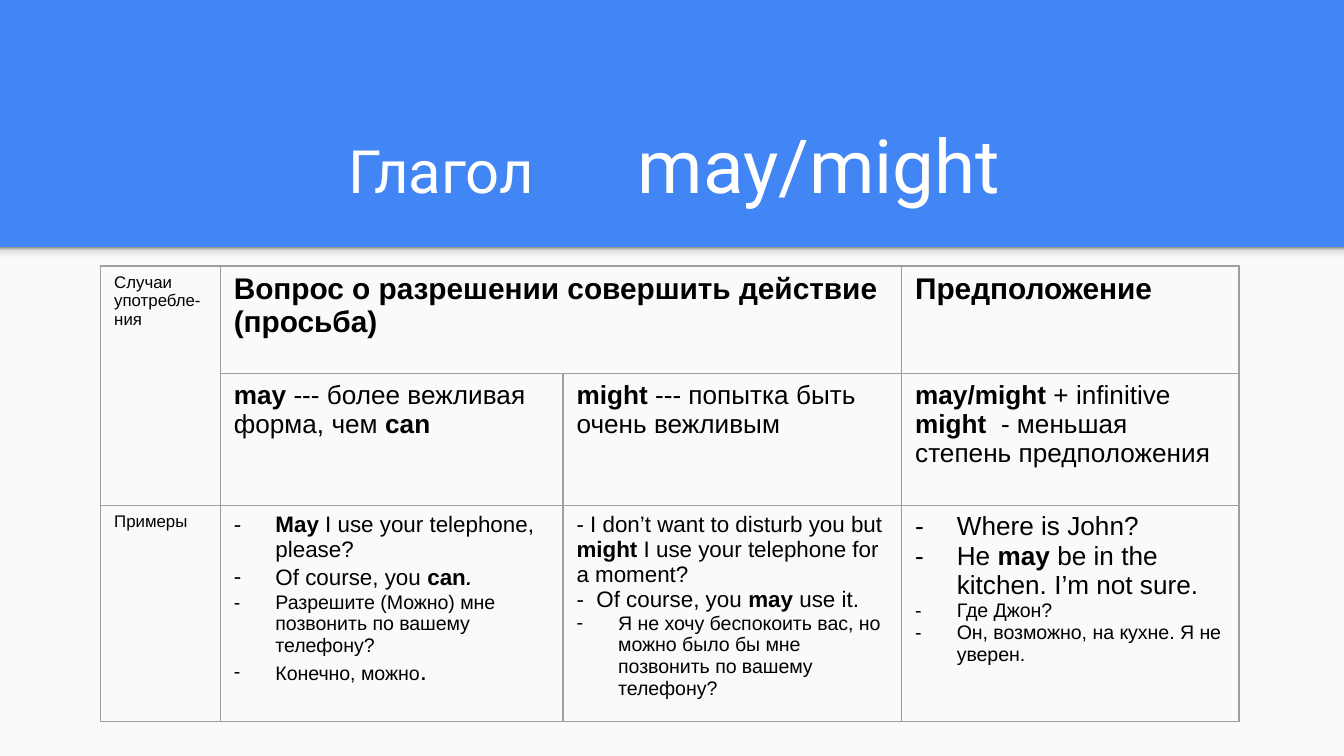
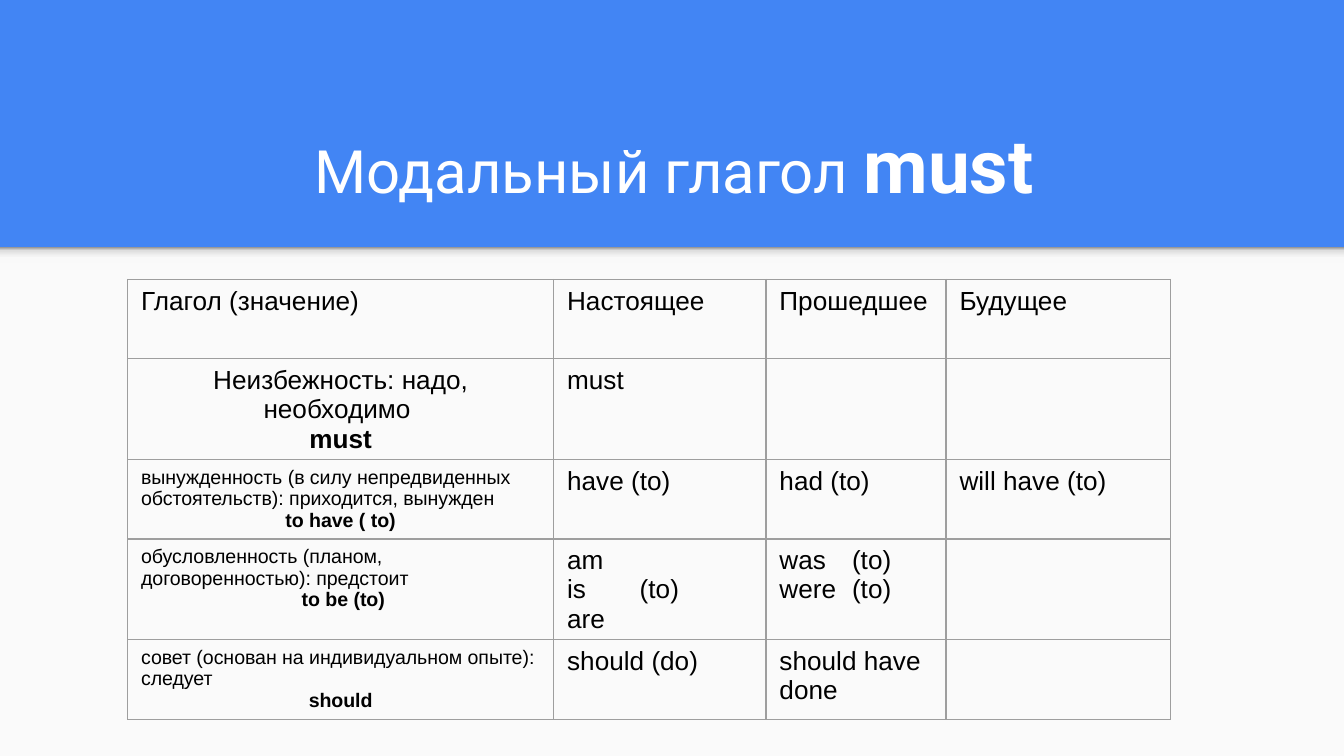
from dataclasses import dataclass

from lxml import etree
from pptx import Presentation
from pptx.dml.color import RGBColor
from pptx.enum.shapes import MSO_SHAPE
from pptx.enum.text import MSO_ANCHOR, PP_ALIGN
from pptx.oxml.ns import qn
from pptx.util import Inches, Pt

RECT = MSO_SHAPE.RECTANGLE
CENTER = PP_ALIGN.CENTER
BOTTOM = MSO_ANCHOR.BOTTOM


@dataclass(frozen=True)
class Theme:
    blue: str = "4285F4"
    paper: str = "FAFAFA"
    white: str = "FFFFFF"
    black: str = "000000"
    grid: str = "9E9E9E"
    shadow: tuple = ((0, "F9F9F9"), (36, "F9F9F9"), (80, "DEDEDE"), (100, "999999"))
    title_font: str = "Roboto"
    body_font: str = "Arial"
    title: float = 32
    verb: float = 40
    heading: float = 16
    body: float = 14
    example: float = 12
    note: float = 10.5
    label: float = 9


T = Theme()
WIDTH, BAND = 10, 1.84
HEIGHT = WIDTH * 9 / 16
HANG = 0.31
TAB = 0.54


def para(text, size=T.body, **fmt):
    """One paragraph: **bold** marks inside text, plus format keywords."""
    return dict(text=text, size=size, **fmt)


def dash(text, size, **fmt):
    return para(text, size, bullet="-", **fmt)


def centered(text, size=T.body):
    return para(text, size, align=CENTER)


MAY_ROWS = [
    [[para("Случаи употребле-  ния", T.label)],
     [para("**Вопрос о разрешении совершить действие (просьба)**", T.heading)],
     None,
     [para("**Предположение**", T.heading)]],
    [None,
     [para("**may** --- более вежливая форма, чем **can**")],
     [para("**might** --- попытка быть очень вежливым")],
     [para("**may/might** + infinitive"),
      para("**might**  - меньшая степень предположения")]],
    [[para("Примеры", T.label)],
     [dash("**May** I use your telephone, please?", T.example),
      dash("Of course, you **can**", T.example,
           tail=(".", dict(size=T.body, italic=True))),
      dash("Разрешите (Можно) мне позвонить по вашему телефону?", T.note),
      dash("Конечно, можно", T.note, tail=(".", dict(size=T.body)))],
     [para("- I don’t want to disturb you but **might** I use your telephone "
           "for a moment?", T.example),
      para("-  Of course, you **may** use it.", T.example),
      dash("Я не хочу беспокоить вас, но можно было бы мне позвонить по вашему "
           "телефону?", T.note)],
     [dash("Where is John?", T.body),
      dash("He **may** be in the kitchen. I’m not sure.", T.body),
      dash("Где Джон?", T.note),
      dash("Он, возможно, на кухне. Я не уверен.", T.note)]],
]

MUST_ROWS = [
    [[para("Глагол (значение)")], [para("Настоящее")],
     [para("Прошедшее")], [para("Будущее")]],
    [[centered("Неизбежность: надо, необходимо "), centered("**must**")],
     [para("must")], None, None],
    [[para("вынужденность (в силу непредвиденных обстоятельств): приходится, "
           "вынужден", T.note), centered("**to have ( to)**", T.note)],
     [para("have (to)")], [para("had (to)")], [para("will have (to)")]],
    [[para("обусловленность (планом,", T.note),
      para("договоренностью): предстоит", T.note),
      centered("** to be (to)**", T.note)],
     [para("am"), para("is\t(to)", tab=TAB), para("are")],
     [para("was\t(to)", tab=TAB), para("were\t(to)", tab=TAB)], None],
    [[para("совет (основан на индивидуальном опыте): следует", T.note),
      centered("**should**", T.note)],
     [para("should (do)")], [para("should have done")], None],
]

SLIDES = [
    dict(title=[("Глагол", {}), (" ", dict(spacing=47.5)),
                ("may/might", dict(size=T.verb))],
         at=(0.75, 1.98), cols=(0.89, 2.55, 2.52, 2.51), heights=(0.8, 0.98, 1.61),
         rows=MAY_ROWS, merges=[((0, 0), (1, 0)), ((0, 1), (0, 2))]),
    dict(title=[("Модальный глагол ", {}), ("must", dict(size=T.verb, bold=True))],
         at=(0.95, 2.08), cols=(3.17, 1.58, 1.34, 1.67),
         heights=(0.59,) * 5, rows=MUST_ROWS, merges=[]),
]


def rgb(color):
    return RGBColor.from_string(color)


def add_run(p, text, size=T.body, bold=False, italic=False, color=T.black,
            font=T.body_font, spacing=None):
    r = p.add_run()
    r.text = text
    f = r.font
    f.size, f.bold, f.italic, f.name = Pt(size), bold, italic, font
    f.color.rgb = rgb(color)
    if spacing:
        r._r.get_or_add_rPr().set("spc", str(int(spacing * 100)))


def write_para(p, text, size, align=None, bullet=None, tab=None, tail=None):
    p.alignment = align
    pPr = p._p.get_or_add_pPr()
    if bullet:
        pPr.set("marL", str(Inches(HANG)))
        pPr.set("indent", str(-Inches(HANG)))
        color = etree.SubElement(pPr, qn("a:buClr"))
        etree.SubElement(color, qn("a:srgbClr"), val=T.black)
        etree.SubElement(pPr, qn("a:buFont"), typeface=T.body_font)
        etree.SubElement(pPr, qn("a:buChar"), char=bullet)
    if tab:
        tabs = etree.SubElement(pPr, qn("a:tabLst"))
        etree.SubElement(tabs, qn("a:tab"), pos=str(Inches(tab)), algn="l")
    for i, part in enumerate(text.split("**")):
        if part:
            add_run(p, part, size, bold=i % 2 == 1)
    if tail:
        add_run(p, tail[0], **tail[1])


def add_rect(s, top, height):
    sp = s.shapes.add_shape(RECT, 0, Inches(top), Inches(WIDTH), Inches(height))
    sp.shadow.inherit = False
    sp.line.fill.background()
    return sp


def add_frame(s):
    """Blue background, light lower panel and the soft edge under the band."""
    s.background.fill.solid()
    s.background.fill.fore_color.rgb = rgb(T.blue)
    panel = add_rect(s, BAND, HEIGHT - BAND)
    panel.fill.solid()
    panel.fill.fore_color.rgb = rgb(T.paper)
    edge = add_rect(s, BAND, 0.12)
    edge.fill.gradient()
    edge.fill.gradient_angle = 90
    stops = edge._element.spPr.find(qn("a:gradFill")).find(qn("a:gsLst"))
    for stop in list(stops):
        stops.remove(stop)
    for pos, color in T.shadow:
        stop = etree.SubElement(stops, qn("a:gs"), pos=str(pos * 1000))
        etree.SubElement(stop, qn("a:srgbClr"), val=color)


def add_title(s, runs):
    box = s.shapes.add_textbox(Inches(0.52), Inches(0.81), Inches(8.99), Inches(0.84))
    tf = box.text_frame
    tf.word_wrap = True
    tf.vertical_anchor = BOTTOM
    tf.margin_left = tf.margin_right = tf.margin_top = tf.margin_bottom = Inches(0.1)
    p = tf.paragraphs[0]
    p.alignment = CENTER
    for text, fmt in runs:
        add_run(p, text, **{"size": T.title, "color": T.white,
                            "font": T.title_font, **fmt})


def style_cell(cell):
    tcPr = cell._tc.get_or_add_tcPr()
    for side in ("L", "R", "T", "B"):
        ln = etree.SubElement(tcPr, qn("a:ln" + side), w=str(Pt(0.75)))
        fill = etree.SubElement(ln, qn("a:solidFill"))
        etree.SubElement(fill, qn("a:srgbClr"), val=T.grid)
    cell.fill.background()
    cell.margin_left = cell.margin_right = Inches(0.1)
    cell.margin_top, cell.margin_bottom = Inches(0.05), 0


def add_grid(s, at, cols, heights, rows, merges):
    left, top = at
    table = s.shapes.add_table(len(rows), len(cols), Inches(left), Inches(top),
                               Inches(sum(cols)), Inches(sum(heights))).table
    table.first_row = table.horz_banding = False
    for column, width in zip(table.columns, cols):
        column.width = Inches(width)
    for row, height in zip(table.rows, heights):
        row.height = Inches(height)
    for first, last in merges:
        table.cell(*first).merge(table.cell(*last))
    for i, row in enumerate(rows):
        for j, paras in enumerate(row):
            cell = table.cell(i, j)
            style_cell(cell)
            tf = cell.text_frame
            for k, content in enumerate(paras or []):
                p = tf.add_paragraph() if k else tf.paragraphs[0]
                write_para(p, **content)


def main():
    prs = Presentation()
    prs.slide_width, prs.slide_height = Inches(WIDTH), Inches(HEIGHT)
    blank = prs.slide_layouts[6]
    for content in SLIDES:
        s = prs.slides.add_slide(blank)
        add_frame(s)
        add_title(s, content["title"])
        add_grid(s, content["at"], content["cols"], content["heights"],
                 content["rows"], content["merges"])
    prs.save("out.pptx")


if __name__ == "__main__":
    main()
